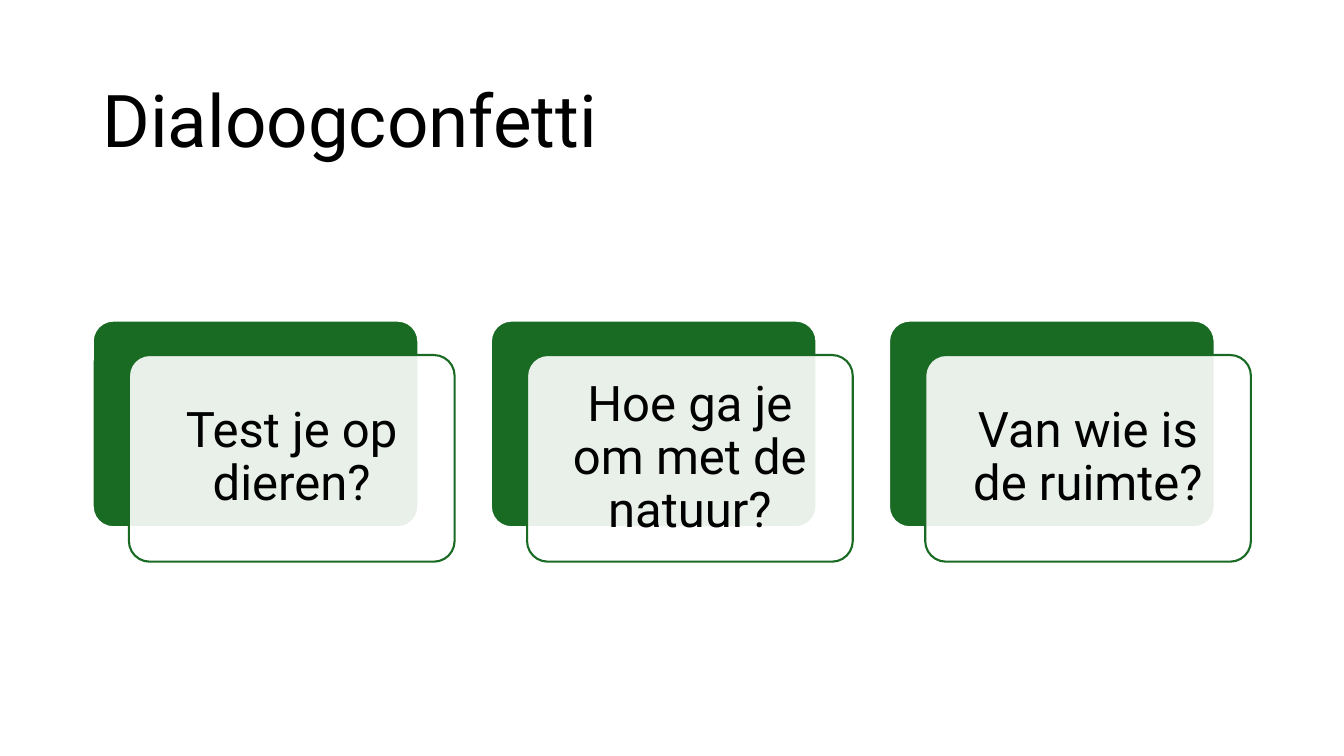
from lxml import etree
from pptx import Presentation
from pptx.dml.color import RGBColor
from pptx.enum.shapes import MSO_SHAPE as Shape
from pptx.enum.text import MSO_ANCHOR as Anchor, PP_ALIGN as Align
from pptx.oxml.ns import qn
from pptx.util import Pt

TITLE = "Dialoogconfetti"
QUESTIONS = [
    "Test je op dieren?",
    "Hoe ga je om met de natuur?",
    "Van wie is de ruimte?",
]

GREEN, WHITE, BLACK = "196B24", "FFFFFF", "000000"
FONT = "Roboto"
LEFT, CARD_TOP = 66.24, 229
CARD_WIDTH, CARD_HEIGHT = 232.6, 147.6
CARD_STEP = 284.4
SHIFT_X, SHIFT_Y = 25.9, 24.6
CARD_INSET = 15


def color(value):
    return RGBColor.from_string(value)


def write(frame, text, size, align, inset_x, inset_y):
    settings = {
        "word_wrap": True,
        "vertical_anchor": Anchor.MIDDLE,
        "margin_left": Pt(inset_x),
        "margin_right": Pt(inset_x),
        "margin_top": Pt(inset_y),
        "margin_bottom": Pt(inset_y),
    }
    for name, value in settings.items():
        setattr(frame, name, value)
    paragraph = frame.paragraphs[0]
    paragraph.text = text
    paragraph.alignment = align
    paragraph.line_spacing = 0.9
    for name, value in {"name": FONT, "size": Pt(size)}.items():
        setattr(paragraph.font, name, value)
    paragraph.font.color.rgb = color(BLACK)


def add_card(slide, left, top, fill, line, opacity=100):
    card = slide.shapes.add_shape(
        Shape.ROUNDED_RECTANGLE, Pt(left), Pt(top), Pt(CARD_WIDTH), Pt(CARD_HEIGHT)
    )
    card.adjustments[0] = 0.1
    card.shadow.inherit = False
    card.fill.solid()
    card.fill.fore_color.rgb = color(fill)
    card.line.color.rgb = color(line)
    card.line.width = Pt(1.5)
    if opacity < 100:
        fill_color = card.fill._xPr.find(qn("a:solidFill"))[0]
        etree.SubElement(fill_color, qn("a:alpha"), val=str(opacity * 1000))
    return card


def main():
    deck = Presentation()
    deck.slide_width, deck.slide_height = Pt(960), Pt(540)
    slide = deck.slides.add_slide(deck.slide_layouts[6])

    title = slide.shapes.add_textbox(Pt(LEFT), Pt(43.9), Pt(828), Pt(89.3))
    write(title.text_frame, TITLE, 52, Align.LEFT, 7.2, 3.6)

    for index, question in enumerate(QUESTIONS):
        left = LEFT + index * CARD_STEP
        add_card(slide, left, CARD_TOP, GREEN, WHITE)
        front = add_card(slide, left + SHIFT_X, CARD_TOP + SHIFT_Y, WHITE, GREEN, 90)
        write(front.text_frame, question, 35, Align.CENTER, CARD_INSET, CARD_INSET)

    deck.save("out.pptx")


if __name__ == "__main__":
    main()
